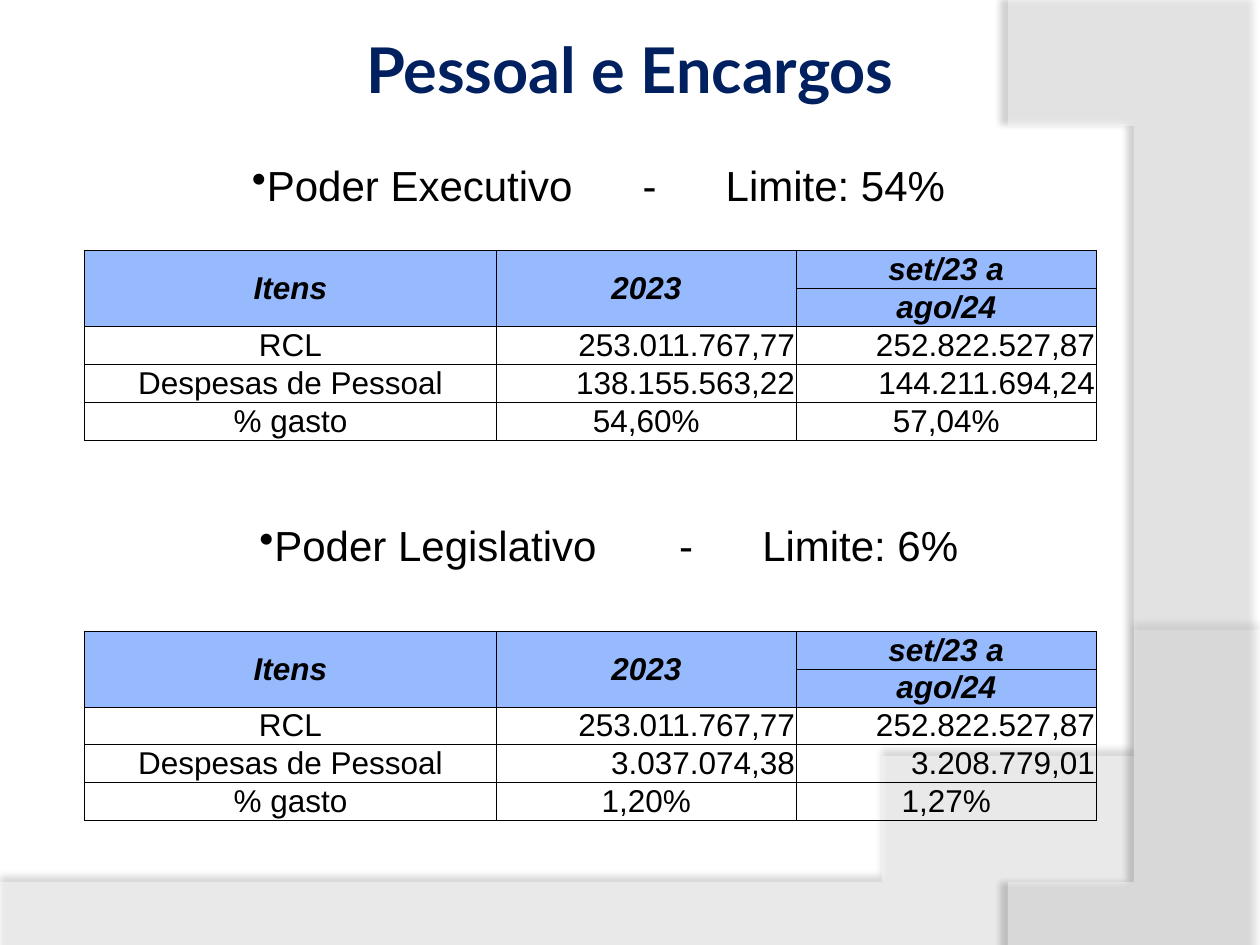
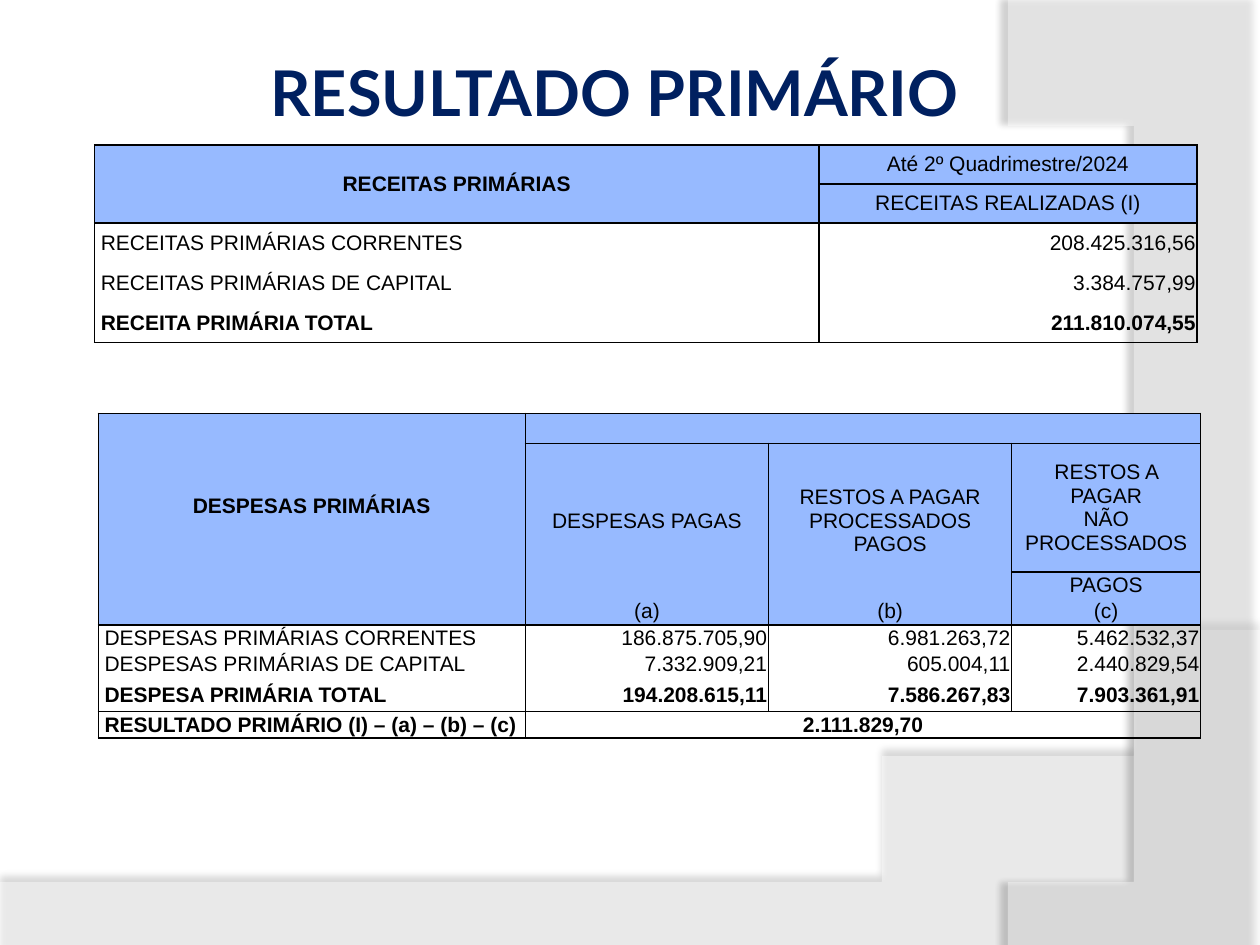
from dataclasses import dataclass

from lxml import etree
from pptx import Presentation
from pptx.dml.color import RGBColor
from pptx.enum.text import MSO_ANCHOR, PP_ALIGN
from pptx.oxml.ns import qn
from pptx.util import Inches, Pt

LEFT, CENTER, RIGHT = PP_ALIGN.LEFT, PP_ALIGN.CENTER, PP_ALIGN.RIGHT
MIDDLE = MSO_ANCHOR.MIDDLE


@dataclass(frozen=True)
class Theme:
    navy: str = "002060"
    header: str = "97BAFF"
    black: str = "000000"
    white: str = "FFFFFF"
    title_font: str = "Lato"
    body_font: str = "Arial"
    title_size: int = 36
    heading_size: int = 24
    large_table_size: int = 18
    small_table_size: int = 12
    number_inset: float = 0.01


def child(parent, tag, **attrs):
    return etree.SubElement(parent, qn(tag), {k: str(v) for k, v in attrs.items()})


def bezier(p0, p1, p2, p3, steps=60):
    """Points along a cubic curve, both ends included."""
    points = []
    for i in range(steps + 1):
        t = i / steps
        u = 1 - t
        weights = (u ** 3, 3 * u * u * t, 3 * u * t * t, t ** 3)
        points.append(tuple(sum(w * p[axis] for w, p in zip(weights, (p0, p1, p2, p3)))
                            for axis in (0, 1)))
    return points


class Deck:
    def __init__(self, theme):
        self.theme = theme
        self.prs = Presentation()
        self.prs.slide_width, self.prs.slide_height = Inches(10), Inches(7.5)
        self.slide = None

    def new_slide(self):
        self.slide = self.prs.slides.add_slide(self.prs.slide_layouts[6])
        wave = [(0, 7.51), (10, 7.51)] + bezier((10, 5.2), (5.59, 7.29), (3.91, 7.19), (0, 7.05))
        arc = [(10, 0.02), (10, 7.5)] + bezier((8.21, 7.5), (9.35, 6.19), (10.18, 3), (8, 0))
        self.veil(wave, opacity=45, shade=35, distance=3.5, angle=270)
        self.veil(arc, opacity=40, shade=45, distance=4, angle=180)

    def veil(self, points, opacity, shade, distance, angle):
        """Translucent white outline with a soft shadow."""
        builder = self.slide.shapes.build_freeform(*points[0], scale=Inches(1))
        builder.add_line_segments(points[1:], close=True)
        sp = builder.convert_to_shape()
        sp.fill.solid()
        sp.fill.fore_color.rgb = RGBColor.from_string(self.theme.white)
        sp.line.fill.background()
        sp.shadow.inherit = False
        props = sp._element.spPr
        child(props.find(".//" + qn("a:srgbClr")), "a:alpha", val=opacity * 1000)
        shadow = child(props.find(qn("a:effectLst")), "a:outerShdw", blurRad=Pt(4),
                       dist=Pt(distance), dir=angle * 60000, algn="ctr", rotWithShape=0)
        color = child(shadow, "a:srgbClr", val=self.theme.black)
        child(color, "a:alpha", val=shade * 1000)

    def style(self, p, font, size, color, align=CENTER, bold=False, italic=False):
        p.alignment = align
        p.font.name, p.font.size = font, Pt(size)
        p.font.bold, p.font.italic = bold, italic
        p.font.color.rgb = RGBColor.from_string(color)

    def text_box(self, text, left, top, width, height):
        sp = self.slide.shapes.add_textbox(*map(Inches, (left, top, width, height)))
        tf = sp.text_frame
        tf.word_wrap, tf.vertical_anchor = True, MIDDLE
        tf.margin_left = tf.margin_right = tf.margin_top = tf.margin_bottom = Inches(0.05)
        tf.text = text
        return tf

    def title(self, text, top, width):
        tf = self.text_box(text, 0.5, top, width, 0.85)
        self.style(tf.paragraphs[0], self.theme.title_font, self.theme.title_size,
                   self.theme.navy, bold=True)

    def heading(self, parts, left, top, width, inset, tabs):
        """Bulleted line whose parts are set apart by tab stops."""
        tf = self.text_box("\t".join(parts), left, top, width, 0.39)
        tf.margin_left = Inches(inset)
        p = tf.paragraphs[0]
        self.style(p, self.theme.body_font, self.theme.heading_size, self.theme.black, LEFT)
        props = p._p.get_or_add_pPr()
        props.set("marL", "0")
        props.set("indent", "0")
        bullet = etree.Element(qn("a:buChar"), char="•")
        stops = etree.Element(qn("a:tabLst"))
        for tab in tabs:
            child(stops, "a:tab", pos=Inches(tab), algn="l")
        defaults = props.find(qn("a:defRPr"))
        defaults.addprevious(bullet)
        defaults.addprevious(stops)

    def borders(self, cell, width, top, bottom):
        props = cell._tc.get_or_add_tcPr()
        sides = (("a:lnL", True), ("a:lnR", True), ("a:lnT", top), ("a:lnB", bottom))
        for i, (tag, drawn) in enumerate(sides):
            line = etree.Element(qn(tag), w=str(Pt(width)))
            if drawn:
                child(child(line, "a:solidFill"), "a:srgbClr", val=self.theme.black)
            else:
                child(line, "a:noFill")
            props.insert(i, line)

    def table(self, rows, left, top, widths, heights, merges, size, header_rows,
              label_align=LEFT, inset=0.05, line=1, open_below=(), bold_rows=(),
              strong_header=False):
        """Ruled table; rows in open_below have no line beneath them."""
        theme = self.theme
        frame = self.slide.shapes.add_table(
            len(rows), len(widths), Inches(left), Inches(top),
            Inches(sum(widths)), Inches(sum(heights)))
        tbl = frame.table
        tbl.first_row = tbl.horz_banding = False
        for column, width in zip(tbl.columns, widths):
            column.width = Inches(width)
        for row, height in zip(tbl.rows, heights):
            row.height = Inches(height)
        for r0, c0, r1, c1 in merges:
            tbl.cell(r0, c0).merge(tbl.cell(r1, c1))
        for r, texts in enumerate(rows):
            is_header = r < header_rows
            for c, text in enumerate(texts):
                cell = tbl.cell(r, c)
                is_number = not is_header and c > 0
                if is_header or text.endswith("%") or cell.is_merge_origin:
                    align = CENTER
                else:
                    align = RIGHT if c else label_align
                cell.vertical_anchor = MIDDLE
                cell.margin_left = cell.margin_right = Inches(
                    theme.number_inset if is_number else inset)
                cell.margin_top = cell.margin_bottom = 0
                cell.text = text
                bold = strong_header or c == 0 if is_header else r in bold_rows
                for p in cell.text_frame.paragraphs:
                    self.style(p, theme.body_font, size, theme.black, align, bold,
                               is_header and strong_header)
                if is_header:
                    cell.fill.solid()
                    cell.fill.fore_color.rgb = RGBColor.from_string(theme.header)
                else:
                    cell.fill.background()
                if not cell.is_spanned:
                    last = r + (cell.span_height if cell.is_merge_origin else 1) - 1
                    self.borders(cell, line, r - 1 not in open_below, last not in open_below)

    def spending_table(self, top, body):
        rows = [["Itens", "2023", "set/23 a"], ["", "", "ago/24"]] + body
        self.table(rows, 0.67, top, [3.27, 2.38, 2.38], [0.29] * 5,
                   [(0, 0, 1, 0), (0, 1, 1, 1)], self.theme.large_table_size, 2,
                   label_align=CENTER, inset=self.theme.number_inset, line=0.5,
                   strong_header=True)


def personnel_slide(deck):
    deck.new_slide()
    deck.title("Pessoal e Encargos", 0.12, 9)
    deck.heading(["Poder Executivo", "-", "Limite: 54%"], 1.24, 1.27, 7.06, 0.76, (3.1, 3.76))
    deck.heading(["Poder Legislativo", "-", "Limite: 6%"], 1.53, 4.13, 6.74, 0.53, (3.33, 3.99))
    revenue = ["RCL", "253.011.767,77", "252.822.527,87"]
    deck.spending_table(1.99, [
        revenue,
        ["Despesas de Pessoal", "138.155.563,22", "144.211.694,24"],
        ["% gasto", "54,60%", "57,04%"],
    ])
    deck.spending_table(5.01, [
        revenue,
        ["Despesas de Pessoal", "3.037.074,38", "3.208.779,01"],
        ["% gasto", "1,20%", "1,27%"],
    ])


def primary_result_slide(deck):
    deck.new_slide()
    deck.title("RESULTADO PRIMÁRIO", 0.3, 8.75)
    size = deck.theme.small_table_size
    income = [
        ["RECEITAS PRIMÁRIAS", "Até 2º Quadrimestre/2024"],
        ["", "RECEITAS REALIZADAS (I)"],
        ["RECEITAS PRIMÁRIAS CORRENTES", "208.425.316,56"],
        ["RECEITAS PRIMÁRIAS DE CAPITAL", "3.384.757,99"],
        ["RECEITA PRIMÁRIA TOTAL", "211.810.074,55"],
    ]
    deck.table(income, 0.75, 1.15, [5.75, 3], [0.31, 0.31, 0.32, 0.32, 0.31],
               [(0, 0, 1, 0)], size, 2, open_below=(2, 3), bold_rows=(4,))
    expenses = [
        ["DESPESAS PRIMÁRIAS", "", "", ""],
        ["", "DESPESAS PAGAS", "RESTOS A PAGAR PROCESSADOS PAGOS",
         "RESTOS A PAGAR\vNÃO PROCESSADOS"],
        ["", "", "", "PAGOS"],
        ["", "(a)", "(b)", "(c)"],
        ["DESPESAS PRIMÁRIAS CORRENTES", "186.875.705,90", "6.981.263,72", "5.462.532,37"],
        ["DESPESAS PRIMÁRIAS DE CAPITAL", "7.332.909,21", "605.004,11", "2.440.829,54"],
        ["DESPESA PRIMÁRIA TOTAL", "194.208.615,11", "7.586.267,83", "7.903.361,91"],
        ["RESULTADO PRIMÁRIO (I) – (a) – (b) – (c)", "2.111.829,70", "", ""],
    ]
    merges = [(0, 0, 2, 0), (0, 1, 0, 3), (1, 1, 2, 1), (1, 2, 2, 2), (7, 1, 7, 3)]
    deck.table(expenses, 0.78, 3.28, [3.39, 1.93, 1.93, 1.5],
               [0.24, 1.02, 0.21, 0.21, 0.21, 0.21, 0.27, 0.21],
               merges, size, 4, open_below=(2, 4, 5), bold_rows=(6, 7))


def main():
    deck = Deck(Theme())
    personnel_slide(deck)
    primary_result_slide(deck)
    deck.prs.save("out.pptx")


if __name__ == "__main__":
    main()
